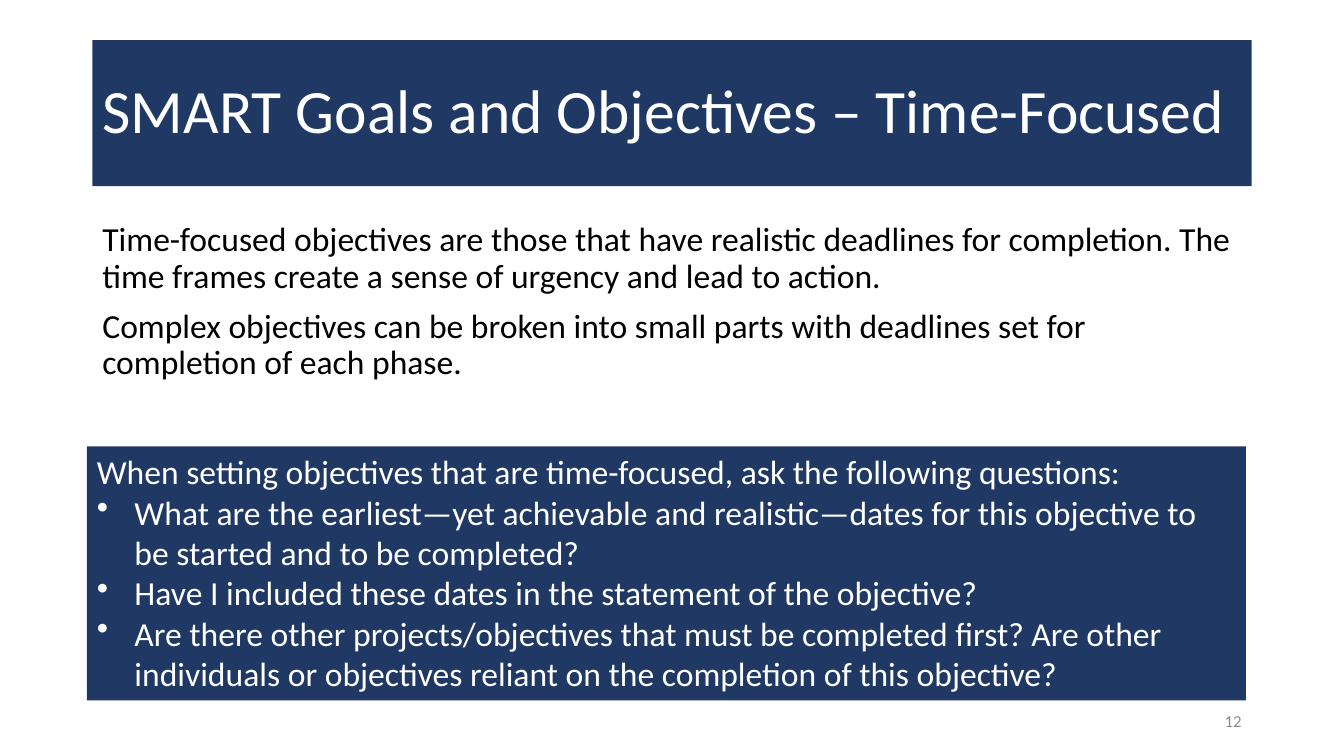
from lxml import etree
from pptx import Presentation
from pptx.dml.color import RGBColor
from pptx.enum.shapes import MSO_SHAPE
from pptx.enum.text import MSO_ANCHOR, MSO_AUTO_SIZE, PP_ALIGN
from pptx.oxml.ns import qn
from pptx.util import Cm, Pt

NAVY = RGBColor(0x20, 0x38, 0x64)
WHITE = RGBColor(0xFF, 0xFF, 0xFF)
BLACK = RGBColor(0, 0, 0)
GRAY = RGBColor(0x8C, 0x8C, 0x8C)
LEFT, RIGHT = PP_ALIGN.LEFT, PP_ALIGN.RIGHT
TOP, MIDDLE = MSO_ANCHOR.TOP, MSO_ANCHOR.MIDDLE
BULLET_INDENT = Cm(0.95)

INTRO = [
    "Time-focused objectives are those that have realistic deadlines for completion. "
    "The time frames create a sense of urgency and lead to action.",
    "Complex objectives can be broken into small parts with deadlines set for "
    "completion of each phase.",
]
QUESTIONS = [
    "When setting objectives that are time-focused, ask the following questions:",
    "What are the earliest—yet achievable and realistic—dates for this objective to "
    "be started and to be completed?",
    "Have I included these dates in the statement of the objective?",
    "Are there other projects/objectives that must be completed first? Are other "
    "individuals or objectives reliant on the completion of this objective?",
]


def write(shape, lines, size, color, align=LEFT, anchor=TOP):
    tf = shape.text_frame
    tf.text = "\n".join(lines)
    tf.word_wrap = True
    tf.auto_size = MSO_AUTO_SIZE.NONE
    tf.vertical_anchor = anchor
    for p in tf.paragraphs:
        p.alignment = align
        p.font.name = "Calibri"
        p.font.size = Pt(size)
        p.font.color.rgb = color
    return tf.paragraphs


prs = Presentation()
prs.slide_width, prs.slide_height = Cm(33.87), Cm(19.05)
s = prs.slides.add_slide(prs.slide_layouts[5])

title = s.shapes.title
title.left, title.top, title.width, title.height = Cm(2.33), Cm(1.01), Cm(29.21), Cm(3.68)
title.fill.solid()
title.fill.fore_color.rgb = NAVY
for p in write(title, ["SMART Goals and Objectives – Time-Focused"], 44, WHITE, anchor=MIDDLE):
    p.line_spacing = 0.9

intro = s.shapes.add_textbox(Cm(2.33), Cm(5.49), Cm(28.93), Cm(5.72))
for p in write(intro, INTRO, 24, BLACK):
    p.line_spacing = 0.9
    p.space_before = Pt(10)

panel = s.shapes.add_shape(MSO_SHAPE.RECTANGLE, Cm(2.19), Cm(11.25), Cm(29.21), Cm(6.4))
panel.shadow.inherit = False
panel.fill.solid()
panel.fill.fore_color.rgb = NAVY
panel.line.fill.background()
for p in write(panel, QUESTIONS, 24, WHITE)[1:]:
    pPr = p._p.get_or_add_pPr()
    pPr.set("marL", str(BULLET_INDENT))
    pPr.set("indent", str(-BULLET_INDENT))
    bullet = etree.Element(qn("a:buChar"), char="•")
    pPr.insert_element_before(bullet, "a:tabLst", "a:defRPr", "a:extLst")

number = s.shapes.add_textbox(Cm(23.92), Cm(17.66), Cm(7.62), Cm(1.01))
write(number, ["12"], 12, GRAY, RIGHT, MIDDLE)

prs.save("out.pptx")
